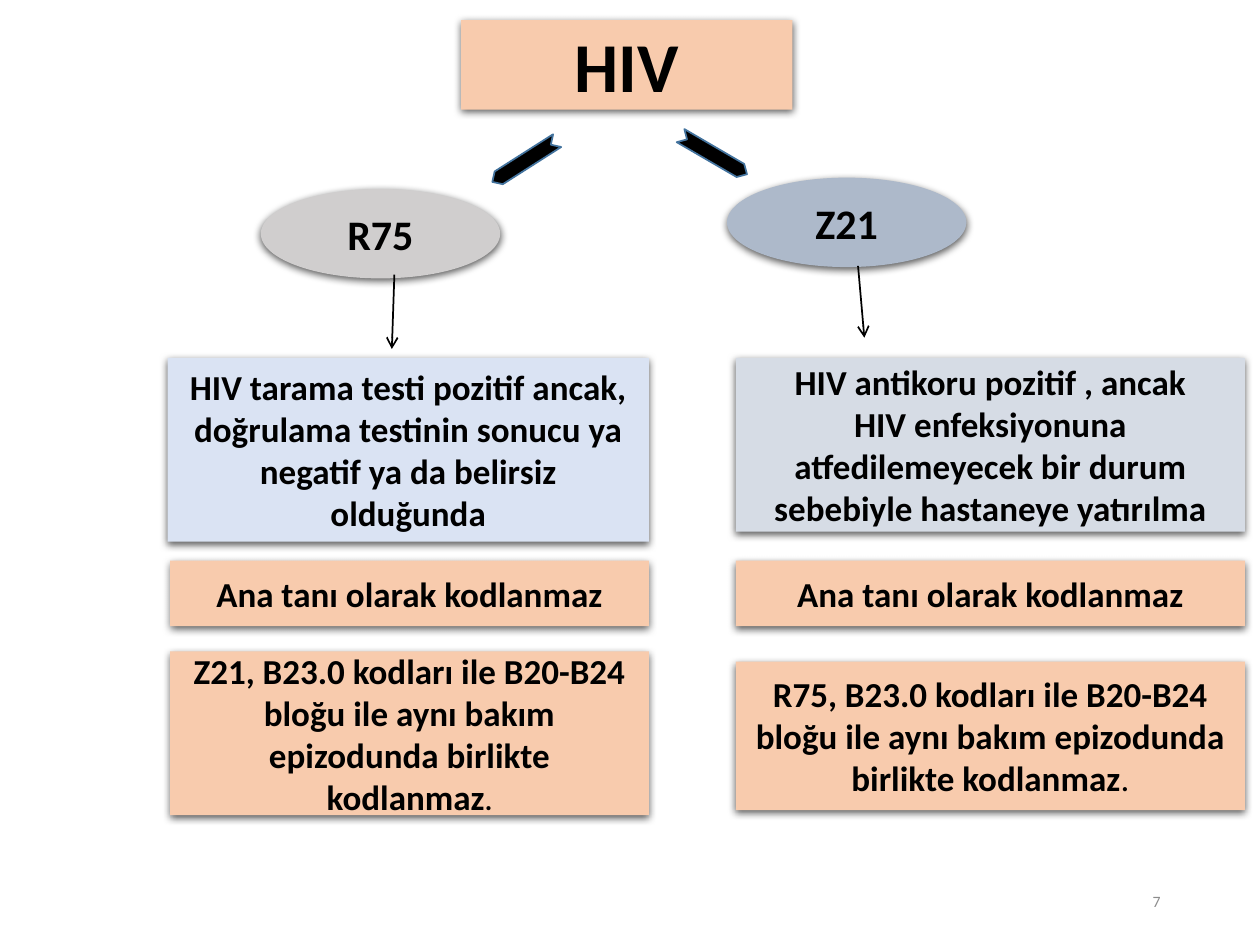
from lxml.etree import SubElement
from pptx import Presentation
from pptx.dml.color import RGBColor
from pptx.enum.shapes import MSO_CONNECTOR as Connector, MSO_SHAPE as Shape
from pptx.enum.text import MSO_ANCHOR as Anchor, PP_ALIGN as Align
from pptx.oxml.ns import qn
from pptx.util import Inches, Pt

COLUMNS, ROWS = 100, 75  # grid over the whole slide
PEACH = "F8CBAD"


def color(hex_code):
    return RGBColor.from_string(hex_code)


class Chart:
    """Holds the style and the current slide; lengths are grid columns and rows."""
    font = "Calibri"
    ink = "000000"

    def __init__(self, deck):
        self.column = deck.slide_width / COLUMNS
        self.row = deck.slide_height / ROWS
        self.page = deck.slides.add_slide(deck.slide_layouts[6])

    def place(self, left, top, width, height):
        return (round(left * self.column), round(top * self.row),
                round(width * self.column), round(height * self.row))

    def style_span(self, span, size, bold, ink):
        span.font.name = self.font
        span.font.size = Pt(size)
        span.font.bold = bold
        span.font.color.rgb = color(ink)

    def set_text(self, shape, text, size, bold=True, ink=ink, align=Align.CENTER):
        frame = shape.text_frame
        frame.word_wrap = True
        frame.vertical_anchor = Anchor.MIDDLE
        frame.text = text
        for para in frame.paragraphs:
            para.alignment = align
            for span in para.runs:
                self.style_span(span, size, bold, ink)

    def add_shadow(self, shape):
        shape.shadow.inherit = False
        effects = shape._element.spPr.find(qn("a:effectLst"))
        shadow = SubElement(effects, qn("a:outerShdw"), blurRad=str(Pt(4.5)),
                            dist=str(Pt(1.5)), dir="5400000", algn="ctr", rotWithShape="0")
        black = SubElement(shadow, qn("a:srgbClr"), val="000000")
        SubElement(black, qn("a:alpha"), val="63000")

    def box(self, area, fill, text, size=20, kind=Shape.RECTANGLE):
        box = self.page.shapes.add_shape(kind, *self.place(*area))
        box.fill.solid()
        box.fill.fore_color.rgb = color(fill)
        box.line.fill.background()
        self.add_shadow(box)
        self.set_text(box, text, size)
        return box

    def full_stop(self, box, size, bold):
        span = box.text_frame.paragraphs[-1].add_run()
        span.text = "."
        self.style_span(span, size, bold, self.ink)

    def chevron(self, left, top, angle):
        mark = self.page.shapes.add_shape(Shape.CHEVRON, *self.place(left, top, 6.1, 1.2))
        mark.rotation = angle
        mark.fill.solid()
        mark.fill.fore_color.rgb = color(self.ink)
        mark.line.color.rgb = color("43739E")
        mark.line.width = Pt(1)
        mark.shadow.inherit = False

    def arrow(self, start, end):
        points = self.place(*start, *end)
        line = self.page.shapes.add_connector(Connector.STRAIGHT, *points)
        line.line.color.rgb = color(self.ink)
        line.line.width = Pt(1)
        properties = line._element.spPr
        SubElement(properties.find(qn("a:ln")), qn("a:tailEnd"), type="arrow")
        SubElement(properties, qn("a:effectLst"))

    def page_number(self, area, text):
        label = self.page.shapes.add_textbox(*self.place(*area))
        self.set_text(label, text, 9, bold=False, ink="8C8C8C", align=Align.RIGHT)


def main():
    deck = Presentation()
    deck.slide_width, deck.slide_height = Inches(10), Inches(7.5)
    chart = Chart(deck)

    # Title and page number
    chart.page_number((70.6, 69.5, 22.5, 4), "7")
    chart.box((36.6, 1.6, 26.3, 7.1), PEACH, "HIV", 40)

    # Code ellipses
    for left, top, fill, code in ((20.7, 15, "D0CECE", "R75"), (57.7, 14.1, "ADB9CA", "Z21")):
        chart.box((left, top, 19, 7.1), fill, code, 24, Shape.OVAL)

    # Definitions
    chart.box((13.3, 28.4, 38.2, 14.6), "DAE3F3",
              "HIV tarama testi pozitif ancak, doğrulama testinin sonucu ya "
              "negatif ya da belirsiz olduğunda")
    chart.box((58.4, 28.4, 40.4, 13.8), "D6DCE5",
              "HIV antikoru pozitif , ancak\nHIV enfeksiyonuna atfedilemeyecek "
              "bir durum sebebiyle hastaneye yatırılma")

    # Coding rules: the same two boxes under each code
    for left, width, top, height, code, stop_size, stop_bold in (
            (13.5, 38, 51.7, 13, "Z21", 16, True),
            (58.4, 40.4, 52.5, 11.8, "R75", 20, False)):
        chart.box((left, 44.5, width, 5.2), PEACH, "Ana tanı olarak kodlanmaz")
        rule = chart.box((left, top, width, height), PEACH,
                         f"{code}, B23.0 kodları ile B20-B24 bloğu ile aynı bakım "
                         "epizodunda birlikte kodlanmaz")
        chart.full_stop(rule, stop_size, stop_bold)

    # Chevrons from the title, arrows from the ellipses
    chart.chevron(38.6, 12.2, 147.5)
    chart.chevron(53.6, 11.7, 30.2)
    chart.arrow((31.3, 21.8), (31.1, 27.7))
    chart.arrow((68.1, 21.1), (68.6, 26.8))

    deck.save("out.pptx")


if __name__ == "__main__":
    main()
